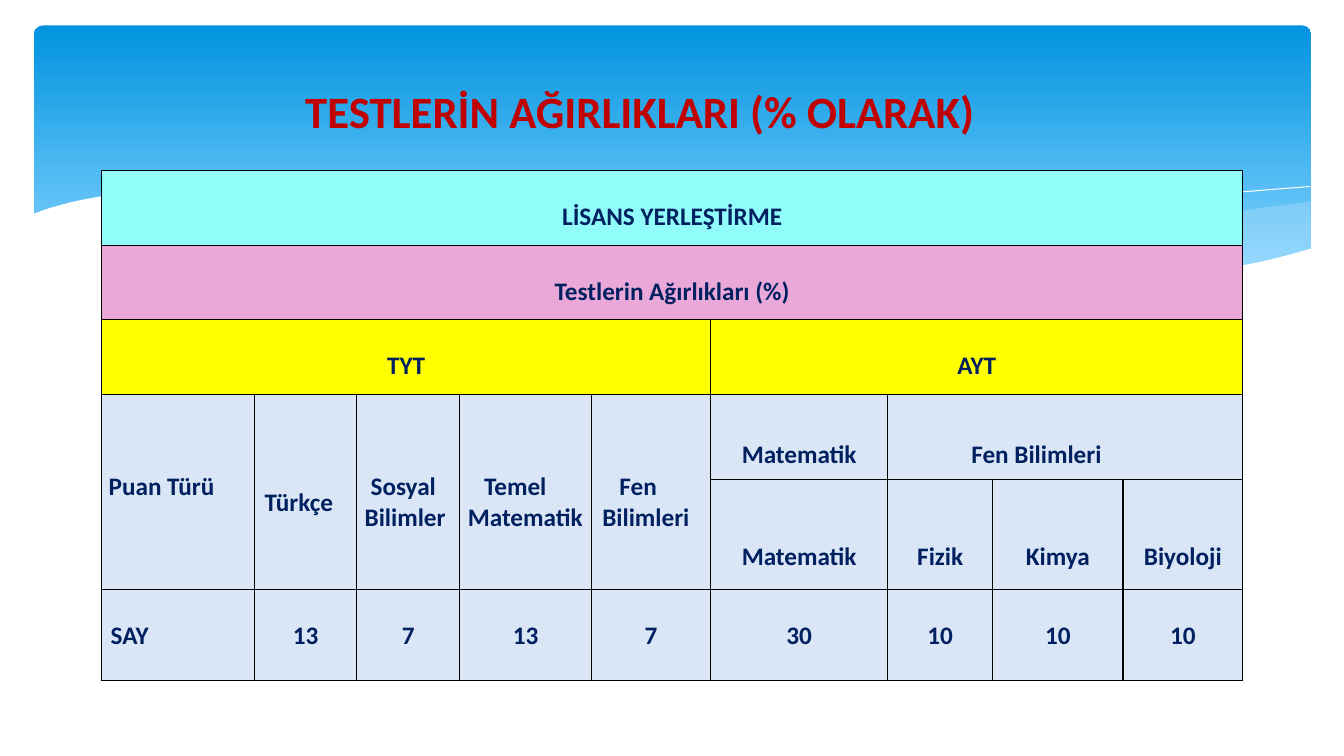
from typing import NamedTuple, Optional

from lxml.etree import SubElement
from pptx import Presentation
from pptx.dml.color import RGBColor as RGB
from pptx.enum.shapes import MSO_SHAPE as Preset
from pptx.enum.text import MSO_ANCHOR as Anchor, PP_ALIGN as Align
from pptx.oxml.ns import qn
from pptx.util import Cm, Pt

FONT = "Calibri"
WHITE = RGB(0xFF, 0xFF, 0xFF)
BLACK = RGB(0, 0, 0)
SKY_TOP = RGB(0x02, 0x93, 0xE0)
SKY_BOTTOM = RGB(0x83, 0xD3, 0xFE)
WAVE = RGB(0xC6, 0xE7, 0xFC)
TITLE_RED = RGB(0xC0, 0, 0)
NAVY = RGB(0, 0x20, 0x60)
CYAN = RGB(0x91, 0xFD, 0xFA)
PINK = RGB(0xEA, 0xA8, 0xD9)
YELLOW = RGB(0xFF, 0xFF, 0)
PALE_BLUE = RGB(0xDA, 0xE6, 0xF6)

CURVE_STEPS = 6
RIGHT_WAVE_TOP = [
    (33.02, 5.08), (31.17, 5.33), (29.13, 5.66), (27.25, 6.02),
    (25.53, 6.3), (22.4, 6.73)]
RIGHT_WAVE_BOTTOM = [
    (22.4, 6.73), (24.33, 6.91), (26.04, 7.04), (28.27, 7.06),
    (30.12, 6.91), (31.67, 6.65), (33.05, 6.27)]
MIDDLE_WAVE_TOP = [
    (30.23, 6.93), (27.33, 6.6), (23.9, 6.1), (21.31, 5.64), (18.8, 5.21),
    (16.56, 4.93), (14.22, 4.75), (12.24, 4.7), (9.7, 4.85)]
MIDDLE_WAVE_BOTTOM = [
    (9.7, 4.85), (12.27, 5.16), (15.21, 5.64), (19.18, 6.3),
    (22.53, 6.76), (25.35, 7.01), (28.4, 7.06), (30.23, 6.93)]
WHITE_WAVE_TOP = [
    (33.1, 6.25), (31.85, 6.58), (30.43, 6.83), (28.8, 6.99),
    (26.87, 7.03), (24.61, 6.91), (21.92, 6.65), (18.8, 6.22),
    (15.14, 5.59), (12.34, 5.13), (9.91, 4.83), (7.77, 4.7),
    (5.44, 4.67), (3.61, 4.8), (2.26, 5.0), (1.37, 5.21), (0.79, 5.41)]
WHITE_WAVE_CORNERS = [(0.79, 8.36), (33.1, 8.36)]
FALLING_LINE = [
    (10.46, 4.95), (13.11, 4.75), (15.88, 4.8), (18.85, 5.0),
    (22.5, 5.41), (26.92, 6.12), (30.73, 6.91)]
RISING_LINE = [
    (20.78, 6.53), (23.55, 5.97), (27.31, 5.33), (30.33, 4.93), (33.02, 4.7)]

COLUMN_WIDTHS = [3.86, 2.57, 2.6, 3.31, 3.01, 4.46, 2.65, 3.28, 3.02]
ROWS = [(1.89, CYAN), (1.87, PINK), (1.89, YELLOW),
        (2.14, PALE_BLUE), (2.77, PALE_BLUE), (2.29, PALE_BLUE)]
LISANS_ROW, WEIGHTS_ROW, EXAM_ROW, SUBJECT_ROW, TEST_ROW, SCORE_ROW = range(6)
FIRST_AYT_COLUMN = 5
HEADER_TOP, TYT_TOP, SUBJECT_TOP, TEST_TOP = 0.79, 1.94, 1.13, 1.56


class Entry(NamedTuple):
    row: int
    column: int
    text: str
    top: float = HEADER_TOP
    rows: int = 1
    columns: int = 1
    left: Optional[float] = None
    first_line: float = 0


HEADINGS = [
    Entry(LISANS_ROW, 0, "LİSANS YERLEŞTİRME", columns=9),
    Entry(WEIGHTS_ROW, 0, "Testlerin Ağırlıkları (%)", columns=9),
    Entry(EXAM_ROW, 0, "TYT", columns=5),
    Entry(EXAM_ROW, FIRST_AYT_COLUMN, "AYT", columns=4),
    Entry(SUBJECT_ROW, 5, "Matematik", SUBJECT_TOP),
    Entry(SUBJECT_ROW, 6, "Fen Bilimleri", SUBJECT_TOP, columns=3, left=2.11)]
TYT_TESTS = [
    Entry(SUBJECT_ROW, column, text, top, rows=2, left=left, first_line=first_line)
    for column, (text, top, left, first_line) in enumerate([
        ("Puan Türü", TYT_TOP, 0.18, 0),
        ("Türkçe", 2.34, 0.25, 0),
        ("Sosyal Bilimler", TYT_TOP, 0.2, 0.15),
        ("Temel Matematik", TYT_TOP, 0.2, 0.41),
        ("Fen Bilimleri", TYT_TOP, 0.28, 0.43)])]
AYT_TESTS = [
    Entry(TEST_ROW, column, text, TEST_TOP)
    for column, text in enumerate(
        ["Matematik", "Fizik", "Kimya", "Biyoloji"], FIRST_AYT_COLUMN)]
SCORES = [Entry(SCORE_ROW, 0, "SAY", left=0.23)] + [
    Entry(SCORE_ROW, column, str(weight))
    for column, weight in enumerate([13, 7, 13, 7, 30, 10, 10, 10], 1)]


def spline(before, start, end, after, t):
    return (start + t * (end - before) / 2
            + t ** 2 * (2 * before - 5 * start + 4 * end - after) / 2
            + t ** 3 * (3 * start - before - 3 * end + after) / 2)


def smooth_curve(knots):
    padded = [knots[0], *knots, knots[-1]]
    curve = [knots[0]]
    for span in zip(padded, padded[1:], padded[2:], padded[3:]):
        xs, ys = zip(*span)
        for step in range(1, CURVE_STEPS + 1):
            t = step / CURVE_STEPS
            curve.append((spline(*xs, t), spline(*ys, t)))
    return curve


def add_outline(slide, points, close):
    start, *rest = [(Cm(x), Cm(y)) for x, y in points]
    builder = slide.shapes.build_freeform(*start)
    builder.add_line_segments(rest, close=close)
    outline = builder.convert_to_shape()
    outline.shadow.inherit = False
    return outline


def add_wave(slide, points, color, opacity):
    wave = add_outline(slide, points, close=True)
    wave.line.fill.background()
    wave.fill.solid()
    wave.fill.fore_color.rgb = color
    tint = wave._element.spPr.find(qn("a:solidFill"))[0]
    SubElement(tint, qn("a:alpha"), val=str(opacity * 1000))


def add_wave_line(slide, knots):
    crest = add_outline(slide, smooth_curve(knots), close=False)
    crest.fill.background()
    crest.line.color.rgb = WHITE
    crest.line.width = Pt(0)


def add_sky(slide):
    sky = slide.shapes.add_shape(
        Preset.ROUNDED_RECTANGLE, Cm(0.85), Cm(0.64), Cm(32.2), Cm(6.86))
    sky.adjustments[0] = 0.034
    sky.shadow.inherit = False
    sky.line.fill.background()
    sky.fill.gradient()
    sky.fill.gradient_angle = 270
    colors = [(0, SKY_TOP), (0.9, SKY_BOTTOM)]
    for stop, (position, color) in zip(sky.fill.gradient_stops, colors):
        stop.position = position
        stop.color.rgb = color


def add_header(slide):
    add_sky(slide)
    right_wave = smooth_curve(RIGHT_WAVE_TOP) + smooth_curve(RIGHT_WAVE_BOTTOM)
    middle_wave = smooth_curve(MIDDLE_WAVE_TOP) + smooth_curve(MIDDLE_WAVE_BOTTOM)
    add_wave(slide, right_wave, WAVE, 29)
    add_wave(slide, middle_wave, WAVE, 40)
    for knots in (FALLING_LINE, RISING_LINE):
        add_wave_line(slide, knots)
    add_wave(slide, smooth_curve(WHITE_WAVE_TOP) + WHITE_WAVE_CORNERS, WHITE, 100)


def style_paragraph(paragraph, size, color, align):
    paragraph.alignment = align
    font = paragraph.font
    font.name, font.size, font.bold = FONT, Pt(size), True
    font.color.rgb = color


def format_title(slide, text):
    title = slide.shapes.title
    title.left, title.top = Cm(4.5), Cm(1.98)
    title.width, title.height = Cm(23.52), Cm(1.63)
    title.text_frame.text = text
    title.text_frame.vertical_anchor = Anchor.MIDDLE
    style_paragraph(title.text_frame.paragraphs[0], 32, TITLE_RED, Align.CENTER)
    slide.shapes._spTree.append(title._element)


def style_cell(cell, color):
    cell.margin_left = cell.margin_right = cell.margin_top = cell.margin_bottom = 0
    for side in ("lnL", "lnR", "lnT", "lnB"):
        border = SubElement(cell._tc.get_or_add_tcPr(), qn(f"a:{side}"), w=str(Pt(1)))
        SubElement(SubElement(border, qn("a:solidFill")), qn("a:srgbClr"), val=str(BLACK))
    cell.fill.solid()
    cell.fill.fore_color.rgb = color


def write_entry(table, entry):
    cell = table.cell(entry.row, entry.column)
    if entry.rows * entry.columns > 1:
        cell.merge(table.cell(entry.row + entry.rows - 1, entry.column + entry.columns - 1))
    centered = entry.left is None
    cell.margin_top, cell.margin_left = Cm(entry.top), Cm(entry.left or 0)
    cell.text = entry.text
    paragraph = cell.text_frame.paragraphs[0]
    style_paragraph(paragraph, 18, NAVY, Align.CENTER if centered else Align.LEFT)
    paragraph._p.get_or_add_pPr().set("indent", str(Cm(entry.first_line)))


def add_weights_table(slide):
    table = slide.shapes.add_table(
        len(ROWS), len(COLUMN_WIDTHS), Cm(2.56), Cm(4.29),
        Cm(sum(COLUMN_WIDTHS)), Cm(sum(height for height, _ in ROWS))).table
    table.first_row = table.horz_banding = False
    for column, width in zip(table.columns, COLUMN_WIDTHS):
        column.width = Cm(width)
    for row, (height, color) in zip(table.rows, ROWS):
        row.height = Cm(height)
        for cell in row.cells:
            style_cell(cell, color)
    for entry in HEADINGS + TYT_TESTS + AYT_TESTS + SCORES:
        write_entry(table, entry)


def main():
    deck = Presentation()
    deck.slide_width, deck.slide_height = Cm(33.87), Cm(19.05)
    slide = deck.slides.add_slide(deck.slide_layouts[5])
    add_header(slide)
    format_title(slide, "TESTLERİN AĞIRLIKLARI (% OLARAK) ")
    add_weights_table(slide)
    deck.save("out.pptx")


if __name__ == "__main__":
    main()
